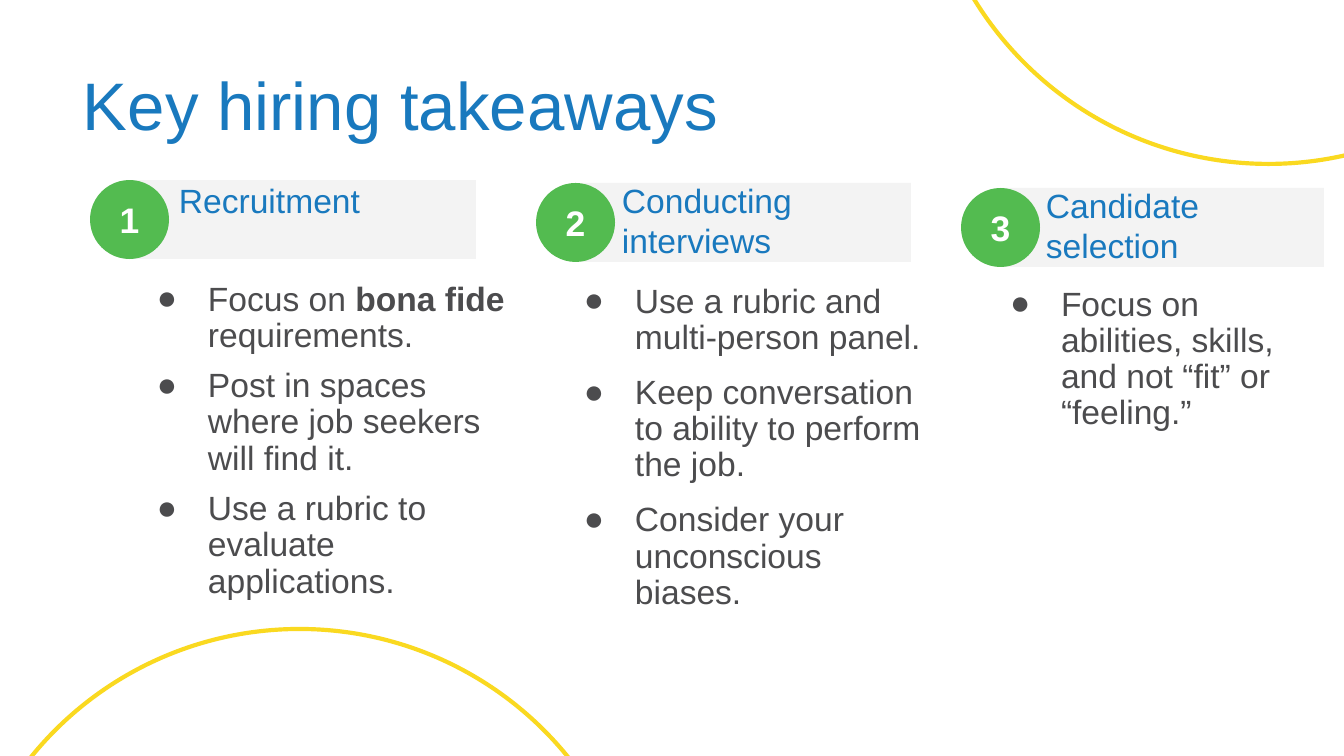
import pptx
import pptx.util
import pptx.dml.color
import pptx.enum.shapes
import pptx.enum.text
import pptx.oxml.ns
import lxml.etree

RGB = pptx.dml.color.RGBColor
SHAPE = pptx.enum.shapes.MSO_SHAPE
ALIGN = pptx.enum.text.PP_ALIGN
ANCHOR = pptx.enum.text.MSO_ANCHOR

BLUE = RGB(0x19, 0x79, 0xBE)
GREEN = RGB(0x53, 0xBB, 0x50)
YELLOW = RGB(0xFA, 0xD9, 0x20)
GRAY = RGB(0x4C, 0x4C, 0x4E)
PALE = RGB(0xF3, 0xF3, 0xF3)
WHITE = RGB(0xFF, 0xFF, 0xFF)

WIDE, HIGH = 1344, 756
SCALE = 9144000 / WIDE
DISC = 79
PAD = 13


def emu(px):
    return pptx.util.Emu(round(px * SCALE))


class Deck:
    font = "Arial"

    def __init__(self):
        self.file = pptx.Presentation()
        self.file.slide_width = emu(WIDE)
        self.file.slide_height = emu(HIGH)
        self.slide = self.file.slides.add_slide(self.file.slide_layouts[6])

    def shape(self, kind, box, fill=None, line=None):
        item = self.slide.shapes.add_shape(kind, *map(emu, box))
        item.shadow.inherit = False
        if fill is None:
            item.fill.background()
        else:
            item.fill.solid()
            item.fill.fore_color.rgb = fill
        if line is None:
            item.line.fill.background()
        else:
            item.line.color.rgb = line
            item.line.width = pptx.util.Pt(2.25)
        return item

    def frame(self, item, pads, anchor=ANCHOR.TOP):
        """Set the wrap, insets (left, top, right, bottom) and anchor."""
        frame = item.text_frame
        frame.word_wrap = True
        frame.margin_left, frame.margin_top, frame.margin_right, frame.margin_bottom = map(emu, pads)
        frame.vertical_anchor = anchor
        return frame

    def style(self, para, size, color, bold=False):
        for run in para.runs:
            run.font.name = self.font
            run.font.size = pptx.util.Pt(size)
            run.font.color.rgb = color
            run.font.bold = bold

    def text(self, box, words, size, pads, anchor=ANCHOR.TOP):
        item = self.slide.shapes.add_textbox(*map(emu, box))
        frame = self.frame(item, pads, anchor)
        frame.text = words
        for para in frame.paragraphs:
            self.style(para, size, BLUE)
        return frame

    def disc(self, left, top, label):
        item = self.shape(SHAPE.OVAL, (left, top, DISC, DISC), GREEN)
        frame = self.frame(item, (0, 0, 0, 0), ANCHOR.MIDDLE)
        frame.text = label
        para = frame.paragraphs[0]
        para.alignment = ALIGN.CENTER
        self.style(para, 19, WHITE, True)

    def bullet(self, para):
        prop = para._p.get_or_add_pPr()
        prop.set("marL", str(emu(67)))
        prop.set("indent", str(emu(-51)))
        name = pptx.oxml.ns.qn
        color = lxml.etree.SubElement(prop, name("a:buClr"))
        lxml.etree.SubElement(color, name("a:srgbClr"), val=str(GRAY))
        lxml.etree.SubElement(prop, name("a:buFont"), typeface=self.font)
        lxml.etree.SubElement(prop, name("a:buChar"), char="●")

    def points(self, box, lines, gap, pad):
        """Add a bulleted list; words between ** marks are bold."""
        item = self.slide.shapes.add_textbox(*map(emu, box))
        frame = self.frame(item, (PAD, pad, PAD, pad))
        for at, line in enumerate(lines):
            para = frame.add_paragraph() if at else frame.paragraphs[0]
            self.bullet(para)
            para.line_spacing = 0.9
            if at:
                para.space_before = pptx.util.Pt(gap)
            for part, words in enumerate(line.split("**")):
                para.add_run().text = words
            self.style(para, 18, GRAY)
            for run in para.runs[1::2]:
                run.font.bold = True

    def arc(self, left, top):
        self.shape(SHAPE.OVAL, (left, top, 691, 691), line=YELLOW)


# Each column: disc corner, band left and width, head box, head inset,
# head words, list box, list gap, list inset, list lines
COLUMNS = [
    ((90, 180), (129, 347), (128, 180, 347, 79), 51, "Recruitment",
     (128, 269, 392, 366), 7.5, PAD,
     ["Focus on **bona fide **requirements.",
      "Post in spaces where job seekers will find it.",
      "Use a rubric to evaluate applications."]),
    ((536, 183), (582, 329), (581, 180, 329, 79), 41, "Conducting\ninterviews",
     (555, 271, 380, 392), 10, PAD,
     ["Use a rubric and multi-person panel.",
      "Keep conversation to ability to perform the job.",
      "Consider your unconscious biases."]),
    ((961, 188), (1001, 323), (1005, 185, 323, 93), 41, "Candidate\nselection",
     (981, 280, 308, 382), 7.5, 7,
     ["Focus on abilities, skills, and not “fit” or “feeling.”"]),
]


def main():
    deck = Deck()
    title = deck.text((70, 36, 1159, 146), "Key hiring takeaways", 36,
                      (PAD, 7, PAD, 7), ANCHOR.MIDDLE)
    title.paragraphs[0].line_spacing = 0.9
    for count, column in enumerate(COLUMNS, 1):
        (left, top), (start, width), head, inset, words, box, gap, pad, lines = column
        deck.shape(SHAPE.RECTANGLE, (start, top, width, DISC), PALE)
        deck.disc(left, top, str(count))
        deck.text(head, words, 18, (inset, 0, PAD, 0))
        deck.points(box, lines, gap, pad)
    deck.arc(923, -527)
    deck.arc(-46, 629)
    deck.file.save("out.pptx")


if __name__ == "__main__":
    main()
